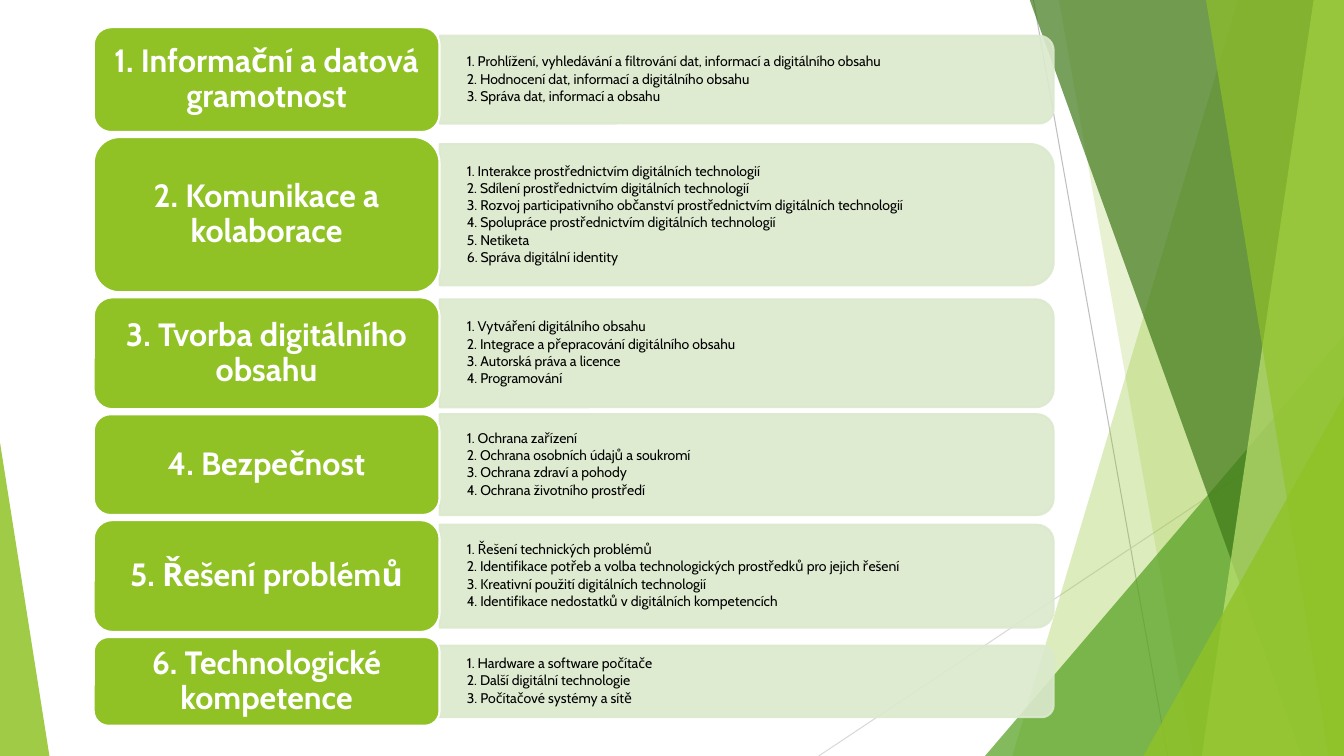
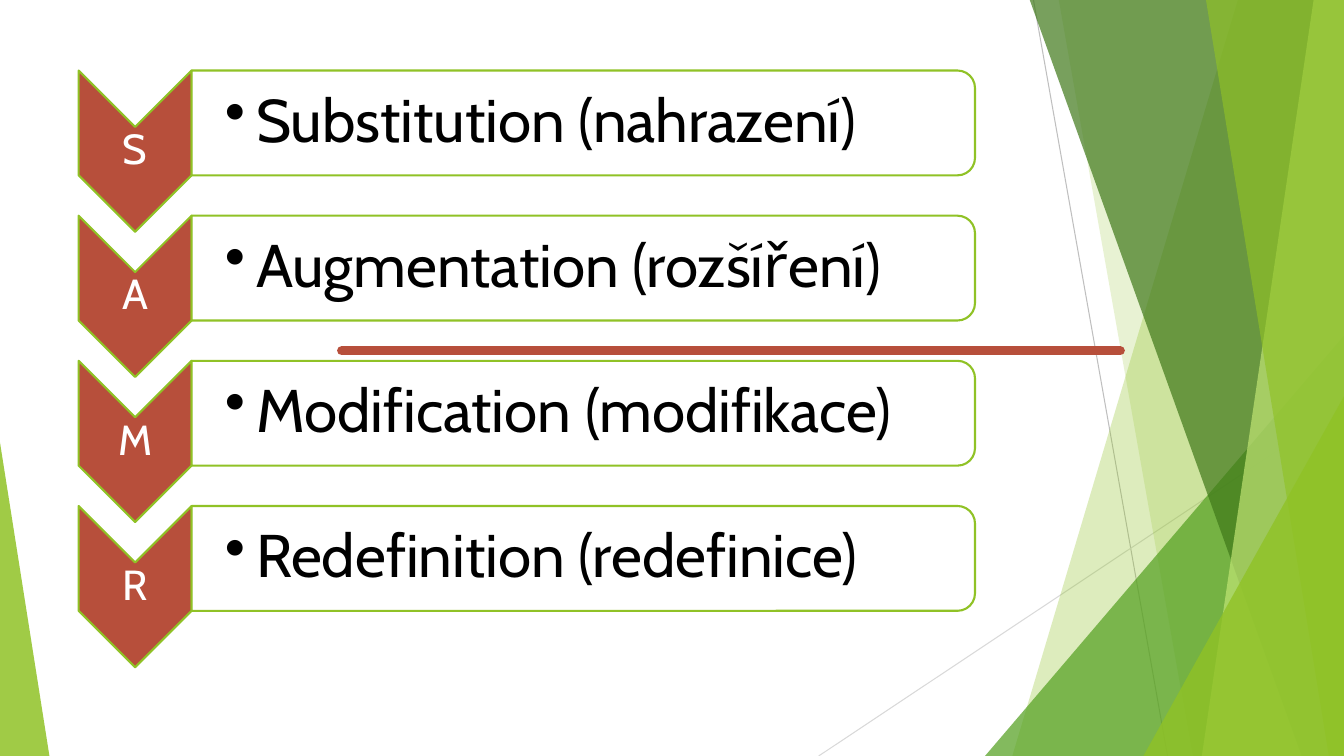
from dataclasses import dataclass

from lxml.etree import SubElement
from pptx import Presentation
from pptx.dml.color import RGBColor
from pptx.enum.shapes import MSO_CONNECTOR, MSO_SHAPE
from pptx.enum.text import MSO_ANCHOR, PP_ALIGN
from pptx.oxml.ns import qn
from pptx.util import Inches, Pt


@dataclass(frozen=True)
class Theme:
    font: str = "Cabin"
    black: str = "000000"
    white: str = "FFFFFF"
    lime: str = "90C226"
    green: str = "54A021"
    forest: str = "3F7819"
    pale_lime: str = "C0E474"
    panel: str = "DBE9CD"
    brick: str = "B74F3B"
    grey: str = "BFBFBF"
    light_grey: str = "D9D9D9"
    list_size: float = 10
    heading_size: float = 23
    letter_size: float = 30
    term_size: float = 43
    outline: float = 1.5


@dataclass(frozen=True)
class Sheet:
    """A band from its slanted left edge to the right side of the slide."""
    top_x: float
    bottom_x: float
    color: str
    opacity: int


@dataclass(frozen=True)
class Wedge:
    """A right triangle standing on the bottom of the slide."""
    left: float
    top: float
    width: float
    apex: float
    color: str
    opacity: int


@dataclass(frozen=True)
class Area:
    heading: str
    height: float
    panel_height: float
    skills: tuple[str, ...]


@dataclass(frozen=True)
class Step:
    letter: str
    term: str


THEME = Theme()
WIDTH, HEIGHT = 13.33, 7.5

BACKDROP = (
    Sheet(12.28, 10.04, THEME.lime, 30),
    Sheet(10.5, 11.83, THEME.lime, 20),
    Wedge(9.77, 3.33, 3.56, 1, THEME.green, 72),
    Sheet(10.21, 12.91, THEME.forest, 70),
    Sheet(13.03, 11.92, THEME.pale_lime, 70),
    Sheet(11.96, 13.18, THEME.lime, 65),
    Wedge(11.34, 3.93, 1.99, 1, THEME.lime, 80),
    Wedge(0, 4.39, 0.49, 0, THEME.lime, 85),
)

AREAS = (
    Area("1. Informační a datová gramotnost", 1.04, 0.87, (
        "Prohlížení, vyhledávání a filtrování dat, informací a digitálního obsahu",
        "Hodnocení dat, informací a digitálního obsahu",
        "Správa dat, informací a obsahu")),
    Area("2. Komunikace a kolaborace", 1.54, 1.4, (
        "Interakce prostřednictvím digitálních technologií",
        "Sdílení prostřednictvím digitálních technologií",
        "Rozvoj participativního občanství prostřednictvím digitálních technologií",
        "Spolupráce prostřednictvím digitálních technologií",
        "Netiketa",
        "Správa digitální identity")),
    Area("3. Tvorba digitálního obsahu", 1.11, 1.07, (
        "Vytváření digitálního obsahu",
        "Integrace a přepracování digitálního obsahu",
        "Autorská práva a licence",
        "Programování")),
    Area("4. Bezpečnost", 1.0, 1.0, (
        "Ochrana zařízení",
        "Ochrana osobních údajů a soukromí",
        "Ochrana zdraví a pohody",
        "Ochrana životního prostředí")),
    Area("5. Řešení problémů", 1.11, 1.02, (
        "Řešení technických problémů",
        "Identifikace potřeb a volba technologických prostředků pro jejich řešení",
        "Kreativní použití digitálních technologií",
        "Identifikace nedostatků v digitálních kompetencích")),
    Area("6. Technologické kompetence", 0.88, 0.71, (
        "Hardware a software počítače",
        "Další digitální technologie",
        "Počítačové systémy a sítě")),
)

STEPS = (
    Step("S", "Substitution (nahrazení)"),
    Step("A", "Augmentation (rozšíření)"),
    Step("M", "Modification (modifikace)"),
    Step("R", "Redefinition (redefinice)"),
)


def set_opacity(fill_parent, percent: int) -> None:
    for color in fill_parent.iter(qn("a:srgbClr")):
        SubElement(color, qn("a:alpha"), val=str(percent * 1000))


def paint(sp, fill: str, *, opacity: int = 100, line: str | None = None,
          line_opacity: int = 100) -> None:
    sp.shadow.inherit = False
    sp.fill.solid()
    sp.fill.fore_color.rgb = RGBColor.from_string(fill)
    if opacity < 100:
        set_opacity(sp.element.spPr, opacity)
    if line is None:
        sp.line.fill.background()
        return
    sp.line.color.rgb = RGBColor.from_string(line)
    sp.line.width = Pt(THEME.outline)
    if line_opacity < 100:
        set_opacity(sp.element.spPr.find(qn("a:ln")), line_opacity)


def add_preset(slide, kind, left: float, top: float, width: float, height: float,
               *, quarter_turn: bool = False):
    """Place a preset shape so that the given box is the one seen after turning."""
    if quarter_turn:
        shift = (width - height) / 2
        left, top, width, height = left + shift, top - shift, height, width
    sp = slide.shapes.add_shape(
        kind, Inches(left), Inches(top), Inches(width), Inches(height))
    sp.rotation = 90 if quarter_turn else 0
    return sp


def add_line(slide, start: tuple[float, float], end: tuple[float, float],
             color: str, width: float, *, round_cap: bool = False):
    s = slide.shapes.add_connector(
        MSO_CONNECTOR.STRAIGHT, *map(Inches, start), *map(Inches, end))
    s.line.color.rgb = RGBColor.from_string(color)
    s.line.width = Pt(width)
    if round_cap:
        s.element.spPr.find(qn("a:ln")).set("cap", "rnd")
    SubElement(s.element.spPr, qn("a:effectLst"))
    return s


def write(sp, lines: tuple[str, ...], *, size: float, color: str, bold: bool = False,
          align=PP_ALIGN.LEFT, insets: tuple[float, float] = (0, 0),
          marker: tuple[str, str, str] | None = None, hanging: float = 0,
          after: float = 0) -> None:
    """Fill a shape with paragraphs; marker is a bullet's tag, attribute and value."""
    tf = sp.text_frame
    tf.word_wrap = True
    tf.vertical_anchor = MSO_ANCHOR.MIDDLE
    tf.margin_left, tf.margin_top = map(Inches, insets)
    tf.margin_right, tf.margin_bottom = tf.margin_left, tf.margin_top
    for i, line in enumerate(lines):
        p = tf.paragraphs[0] if i == 0 else tf.add_paragraph()
        p.alignment = align
        p.line_spacing = 0.9
        p.space_after = Pt(after)
        if marker:
            tag, name, value = marker
            props = p.element.get_or_add_pPr() if hasattr(p, "element") else p._p.get_or_add_pPr()
            props.set("marL", str(Inches(hanging)))
            props.set("indent", str(-Inches(hanging)))
            SubElement(props, qn(tag), {name: value})
        r = p.add_run()
        r.text = line
        r.font.name = THEME.font
        r.font.size = Pt(size)
        r.font.bold = bold
        r.font.color.rgb = RGBColor.from_string(color)


def add_text(slide, left: float, top: float, width: float, height: float,
             lines: tuple[str, ...], **style) -> None:
    box = slide.shapes.add_textbox(
        Inches(left), Inches(top), Inches(width), Inches(height))
    write(box, lines, **style)


def add_sheet(slide, sheet: Sheet):
    top, bottom, right = Inches(-0.01), Inches(HEIGHT), Inches(WIDTH)
    builder = slide.shapes.build_freeform(Inches(sheet.top_x), top, scale=1.0)
    builder.add_line_segments(
        [(right, top), (right, bottom), (Inches(sheet.bottom_x), bottom)], close=True)
    return builder.convert_to_shape()


def add_wedge(slide, wedge: Wedge):
    sp = add_preset(slide, MSO_SHAPE.ISOSCELES_TRIANGLE, wedge.left, wedge.top,
                    wedge.width, HEIGHT - wedge.top)
    sp.adjustments[0] = wedge.apex
    return sp


def build_backdrop(slide) -> None:
    """Draw the shared backdrop and hand it over to the slide's layout."""
    parts = [
        add_line(slide, (10.25, 0), (11.58, HEIGHT), THEME.grey, 0.75),
        add_line(slide, (WIDTH, 4.03), (8.12, HEIGHT), THEME.light_grey, 0.75),
    ]
    for item in BACKDROP:
        sp = add_sheet(slide, item) if isinstance(item, Sheet) else add_wedge(slide, item)
        paint(sp, item.color, opacity=item.opacity)
        parts.append(sp)
    layout_tree = slide.slide_layout.element.cSld.spTree
    for part in parts:
        layout_tree.append(part.element)


def build_areas(slide) -> None:
    left, heading_width, panel_width, gap = 0.93, 3.43, 6.09, 0.05
    panel_left = left + heading_width
    top = 0.27
    for area in AREAS:
        panel_top = top + (area.height - area.panel_height) / 2
        panel_box = (panel_left, panel_top, panel_width, area.panel_height)
        panel = add_preset(slide, MSO_SHAPE.ROUND_2_SAME_RECTANGLE, *panel_box,
                           quarter_turn=True)
        paint(panel, THEME.panel, opacity=90, line=THEME.panel, line_opacity=90)
        add_text(slide, *panel_box, tuple(f" {skill}" for skill in area.skills),
                 size=THEME.list_size, color=THEME.black, insets=(0.27, 0),
                 marker=("a:buAutoNum", "type", "arabicPeriod"), hanging=0.06, after=1.5)
        heading = add_preset(slide, MSO_SHAPE.ROUNDED_RECTANGLE,
                             left, top, heading_width, area.height)
        paint(heading, THEME.lime, line=THEME.white)
        write(heading, (area.heading,), size=THEME.heading_size, color=THEME.white,
              bold=True, align=PP_ALIGN.CENTER, insets=(0.1, 0.05))
        top += area.height + gap


def build_steps(slide) -> None:
    left, first_top, pitch = 0.78, 0.7, 1.44
    arrow_width, arrow_height = 1.12, 1.6
    letter_height = arrow_height - arrow_width
    bar_left, bar_width, bar_height = left + arrow_width, 7.77, 1.04
    for i, step in enumerate(STEPS):
        top = first_top + i * pitch
        arrow = add_preset(slide, MSO_SHAPE.CHEVRON, left, top, arrow_width,
                           arrow_height, quarter_turn=True)
        paint(arrow, THEME.brick, line=THEME.lime)
        add_text(slide, left, top + arrow_width / 2, arrow_width, letter_height,
                 (step.letter,), size=THEME.letter_size, color=THEME.white,
                 align=PP_ALIGN.CENTER)
        bar_box = (bar_left, top, bar_width, bar_height)
        bar = add_preset(slide, MSO_SHAPE.ROUND_2_SAME_RECTANGLE, *bar_box,
                         quarter_turn=True)
        paint(bar, THEME.white, opacity=90, line=THEME.lime)
        add_text(slide, *bar_box, (step.term,), size=THEME.term_size,
                 color=THEME.black, insets=(0.33, 0.03),
                 marker=("a:buChar", "char", "•"), hanging=0.31)
    add_line(slide, (3.39, 3.48), (11.11, 3.48), THEME.brick, 6.75, round_cap=True)


def main() -> None:
    prs = Presentation()
    prs.slide_width, prs.slide_height = Inches(WIDTH), Inches(HEIGHT)
    blank = prs.slide_layouts[6]
    areas_slide, steps_slide = (prs.slides.add_slide(blank) for _ in range(2))
    build_backdrop(areas_slide)
    build_areas(areas_slide)
    build_steps(steps_slide)
    prs.save("out.pptx")


if __name__ == "__main__":
    main()
